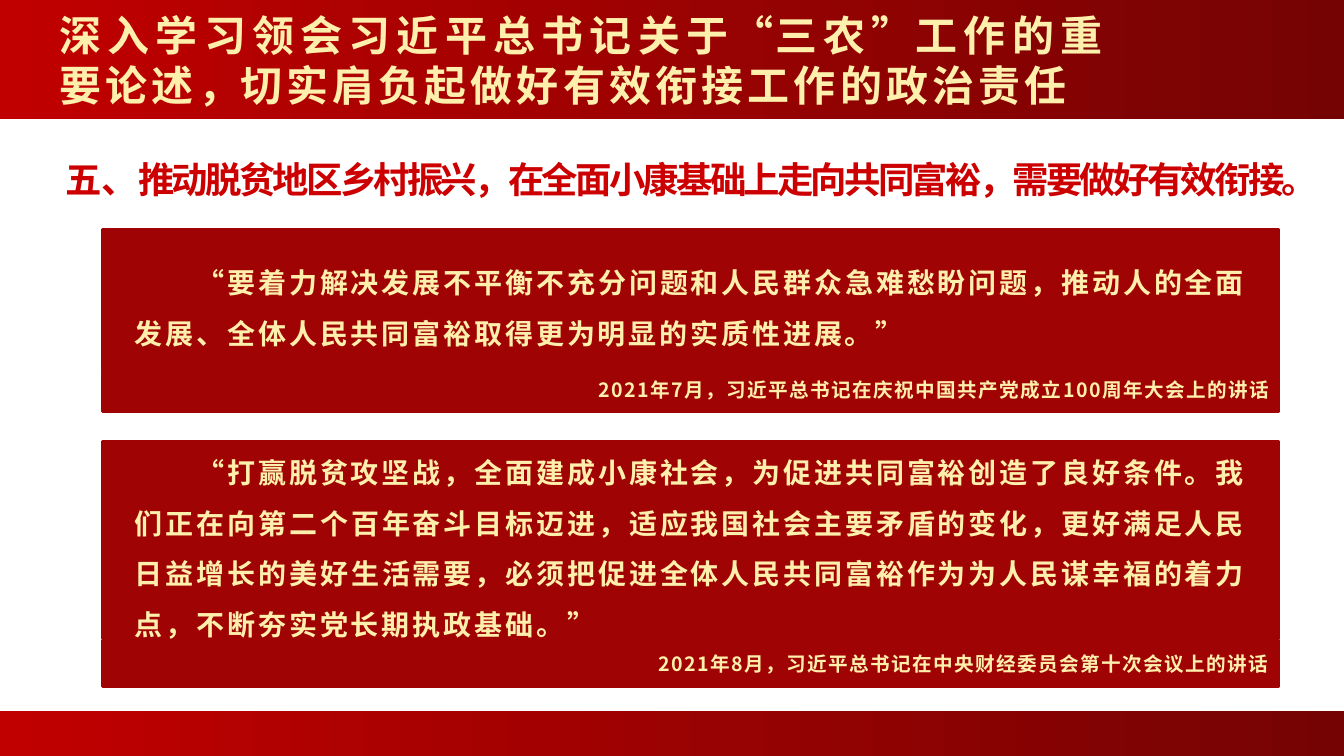
from lxml.etree import SubElement
from pptx import Presentation
from pptx.dml.color import RGBColor
from pptx.enum.shapes import MSO_SHAPE as Kind
from pptx.enum.text import MSO_ANCHOR as Anchor, MSO_AUTO_SIZE as Auto, PP_ALIGN as Align
from pptx.oxml.ns import qn
from pptx.util import Pt

WIDTH, HEIGHT = 960, 540
FONT = "Noto Sans CJK SC"
HUES = {"red": "C00000", "dark": "760303", "card": "A00303",
        "gold": "FEEFAC", "head": "CC0000"}

# Runs: text, letter spacing in points
TITLE = [
    ("深入学习领会习近平总书记关", 3), ("于", -3), ("“", 0), ("三农", 3), ("”", -3),
    ("工作的重要论述", 3), ("，", -3), ("切实肩负起做好有效衔接工作的政治责任", 3),
]
HEADING = [
    ("五、", 0),
    ("推动脱贫地区乡村振兴，在全面小康基础上走向共同富裕，需要做好有效衔接。", -2),
]
# Bands: top, height
BANDS = [(0, 85), (507.6, 32.4)]
# Cards: quote, its top and height, source, its top and height
CARDS = [
    ("“要着力解决发展不平衡不充分问题和人民群众急难愁盼问题，推动人的全面发展、"
     "全体人民共同富裕取得更为明显的实质性进展。”", 164.2, 99.3,
     "2021年7月，习近平总书记在庆祝中国共产党成立100周年大会上的讲话", 263.5, 30.2),
    ("“打赢脱贫攻坚战，全面建成小康社会，为促进共同富裕创造了良好条件。"
     "我们正在向第二个百年奋斗目标迈进，适应我国社会主要矛盾的变化，"
     "更好满足人民日益增长的美好生活需要，必须把促进全体人民共同富裕"
     "作为为人民谋幸福的着力点，不断夯实党长期执政基础。”", 315.4, 140.4,
     "2021年8月，习近平总书记在中央财经委员会第十次会议上的讲话", 457.2, 33.1),
]
CARD_X, CARD_W = 73.4, 840.2


def hue(name):
    return RGBColor.from_string(HUES[name])


def write(shape, runs, size, color, align, pads=(7.2, 3.6, 7.2, 3.6), wrap=True):
    """Fill a shape with one bold paragraph and return that paragraph."""
    frame = shape.text_frame
    frame.word_wrap = wrap
    frame.vertical_anchor = Anchor.MIDDLE
    (frame.margin_left, frame.margin_top,
     frame.margin_right, frame.margin_bottom) = map(Pt, pads)
    para = frame.paragraphs[0]
    para.alignment = align
    for text, gap in runs:
        run = para.add_run()
        run.text = text
        font = run.font
        font.size, font.bold, font.name = Pt(size), True, FONT
        font.color.rgb = hue(color)
        props = run._r.get_or_add_rPr()
        props.set("lang", "zh-CN")
        props.set("spc", str(gap * 100))
        SubElement(props, qn("a:ea")).set("typeface", FONT)
    return para


def add_rect(shapes, left, top, width, height):
    rect = shapes.add_shape(Kind.RECTANGLE, Pt(left), Pt(top), Pt(width), Pt(height))
    rect.shadow.inherit = False
    return rect


def add_band(shapes, top, height):
    band = add_rect(shapes, 0, top, WIDTH, height)
    band.line.fill.background()
    band.fill.gradient()
    band.fill.gradient_angle = 0
    for stop, name in zip(band.fill.gradient_stops, ("red", "dark")):
        stop.color.rgb = hue(name)


def add_panel(shapes, top, height):
    panel = add_rect(shapes, CARD_X, top, CARD_W, height)
    panel.fill.solid()
    panel.fill.fore_color.rgb = hue("card")
    panel.line.color.rgb = hue("card")
    panel.line.width = Pt(2)
    return panel


def add_card(shapes, quote, top, height, source, foot, depth):
    group = shapes.add_group_shape().shapes
    para = write(add_panel(group, top, height), [(quote, 2)], 20, "gold",
                 Align.JUSTIFY, (23, 5.8, 23, 5.8))
    para.line_spacing = 1.5
    props = para._p.get_or_add_pPr()
    props.set("marL", "0")
    props.set("indent", str(Pt(44)))
    write(add_panel(group, foot, depth), [(source, 1)], 14, "gold", Align.RIGHT)


def main():
    deck = Presentation()
    deck.slide_width, deck.slide_height = Pt(WIDTH), Pt(HEIGHT)
    shapes = deck.slides.add_slide(deck.slide_layouts[6]).shapes

    for band in BANDS:
        add_band(shapes, *band)

    title = shapes.add_textbox(Pt(0), Pt(5.8), Pt(796.3), Pt(73.4))
    write(title, TITLE, 30, "gold", Align.JUSTIFY, (42.5, 2.9, 5.8, 2.9))

    head = shapes.add_textbox(Pt(39.6), Pt(102.2), Pt(907.9), Pt(44.6))
    write(head, HEADING, 26, "head", Align.LEFT, wrap=False).line_spacing = 1.2
    head.text_frame.auto_size = Auto.SHAPE_TO_FIT_TEXT

    for card in CARDS:
        add_card(shapes, *card)
    deck.save("out.pptx")


if __name__ == "__main__":
    main()
